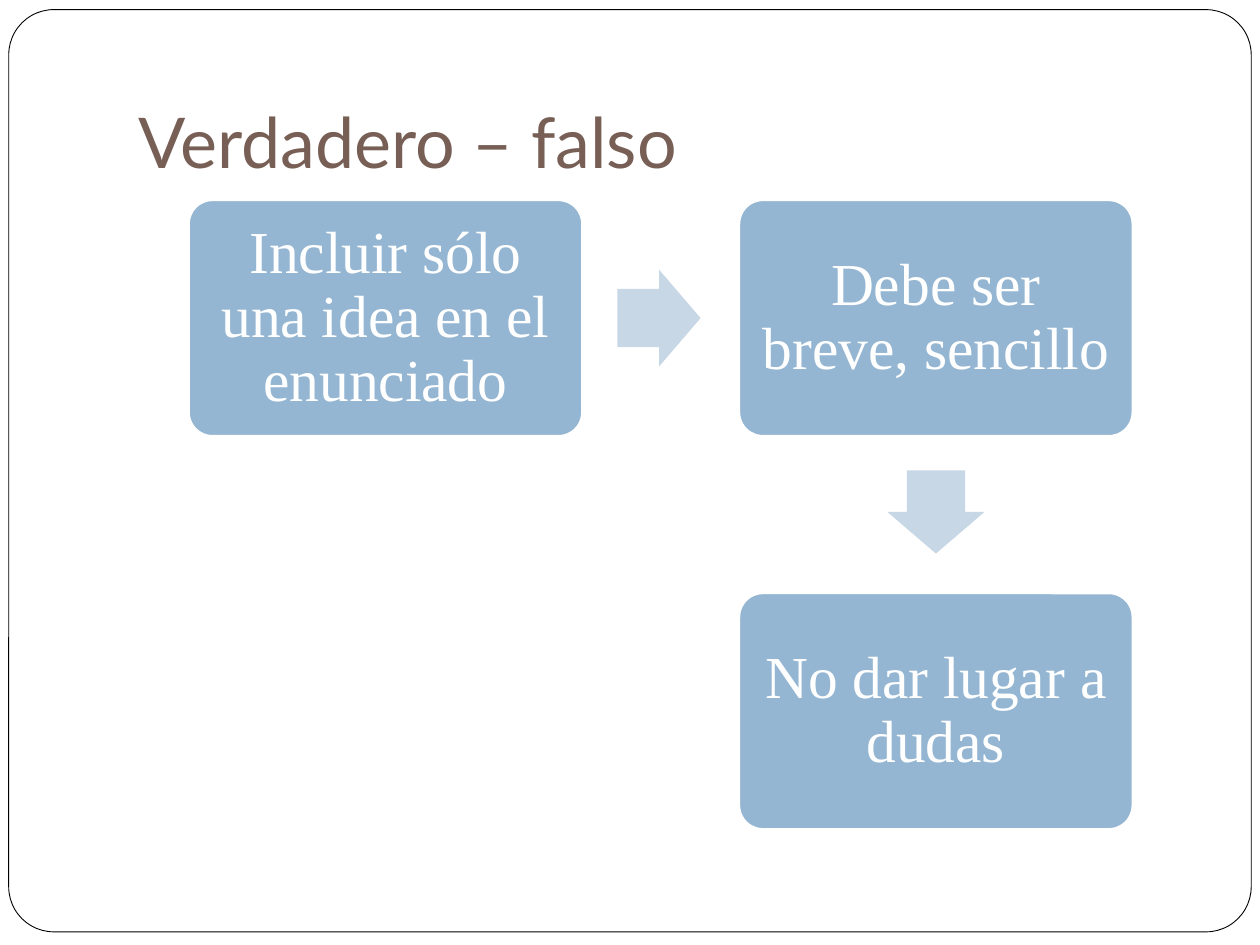
from pptx import Presentation as Deck
from pptx.dml.color import RGBColor as Rgb
from pptx.enum.shapes import MSO_SHAPE as Kind
from pptx.enum.text import MSO_ANCHOR as Anchor, PP_ALIGN as Align
from pptx.util import Pt

WHITE, BLUE, PALE, BROWN = "FFFFFF", "94B6D2", "C8D7E5", "775F55"
LEFT, TOP, WIDE, HIGH = 108, 114.5, 224.6, 134.6
STEP_X, STEP_Y = 314.5, 224.6
LONG, BROAD = 47.5, 55.4
STEPS = [
    (0, 0, "Incluir sólo una idea en el enunciado"),
    (1, 0, "Debe ser breve, sencillo"),
    (1, 1, "No dar lugar a dudas"),
]


def tint(form, color):
    """Give a fill or line format a solid colour."""
    form.solid()
    form.fore_color.rgb = Rgb.from_string(color)


def assign(item, values):
    """Set attributes of an item from a dict."""
    for name, value in values.items():
        setattr(item, name, value)


def shape(slide, kind, area, fill, adjust, line=None, width=1):
    """Add a flat preset shape with an optional outline."""
    item = slide.shapes.add_shape(kind, *map(Pt, area))
    item.shadow.inherit = False
    for index, value in enumerate(adjust):
        item.adjustments[index] = value
    tint(item.fill, fill)
    if line:
        tint(item.line.fill, line)
        item.line.width = Pt(width)
    else:
        item.line.fill.background()
    return item


def write(item, text, font, size, color, insets, anchor, align, space=1):
    """Put one formatted paragraph into an item."""
    frame = item.text_frame
    sides = ("margin_left", "margin_top", "margin_right", "margin_bottom")
    assign(frame, dict(zip(sides, map(Pt, insets))))
    assign(frame, {"word_wrap": True, "vertical_anchor": anchor})
    para = frame.paragraphs[0]
    assign(para, {"alignment": align, "line_spacing": space})
    run = para.add_run()
    run.text = text
    assign(run.font, {"name": font, "size": Pt(size)})
    run.font.color.rgb = Rgb.from_string(color)


def title(slide, text):
    """Add the slide title."""
    box = slide.shapes.add_textbox(*map(Pt, (72, 21.6, 612, 90)))
    write(box, text, "Lato", 40, BROWN, (7.2, 3.6, 7.2, 7.2),
          Anchor.BOTTOM, Align.LEFT)


def step(slide, col, row, text):
    """Add a step box at a grid place."""
    area = (LEFT + col * STEP_X, TOP + row * STEP_Y, WIDE, HIGH)
    box = shape(slide, Kind.ROUNDED_RECTANGLE, area, BLUE, [0.1], WHITE)
    write(box, text, "Times New Roman", 34, WHITE, [6] * 4,
          Anchor.MIDDLE, Align.CENTER, 0.9)


def arrow(slide, x, y, turn=0):
    """Add an arrow centred on a point."""
    area = (x - LONG / 2, y - BROAD / 2, LONG, BROAD)
    shape(slide, Kind.RIGHT_ARROW, area, PALE, [0.6, 0.5]).rotation = turn


def main():
    """Build and save the slide."""
    deck = Deck()
    assign(deck, {"slide_width": Pt(720), "slide_height": Pt(540)})
    slide = deck.slides.add_slide(deck.slide_layouts[6])
    tint(slide.background.fill, WHITE)
    shape(slide, Kind.ROUNDED_RECTANGLE, (5, 5.5, 710, 527),
          WHITE, [0.049], "000000", 0.5)
    title(slide, "Verdadero – falso")
    for col, row, text in STEPS:
        step(slide, col, row, text)
    arrow(slide, 376.6, TOP + HIGH / 2)
    arrow(slide, LEFT + STEP_X + WIDE / 2, 292.6, 90)
    deck.save("out.pptx")


if __name__ == "__main__":
    main()
